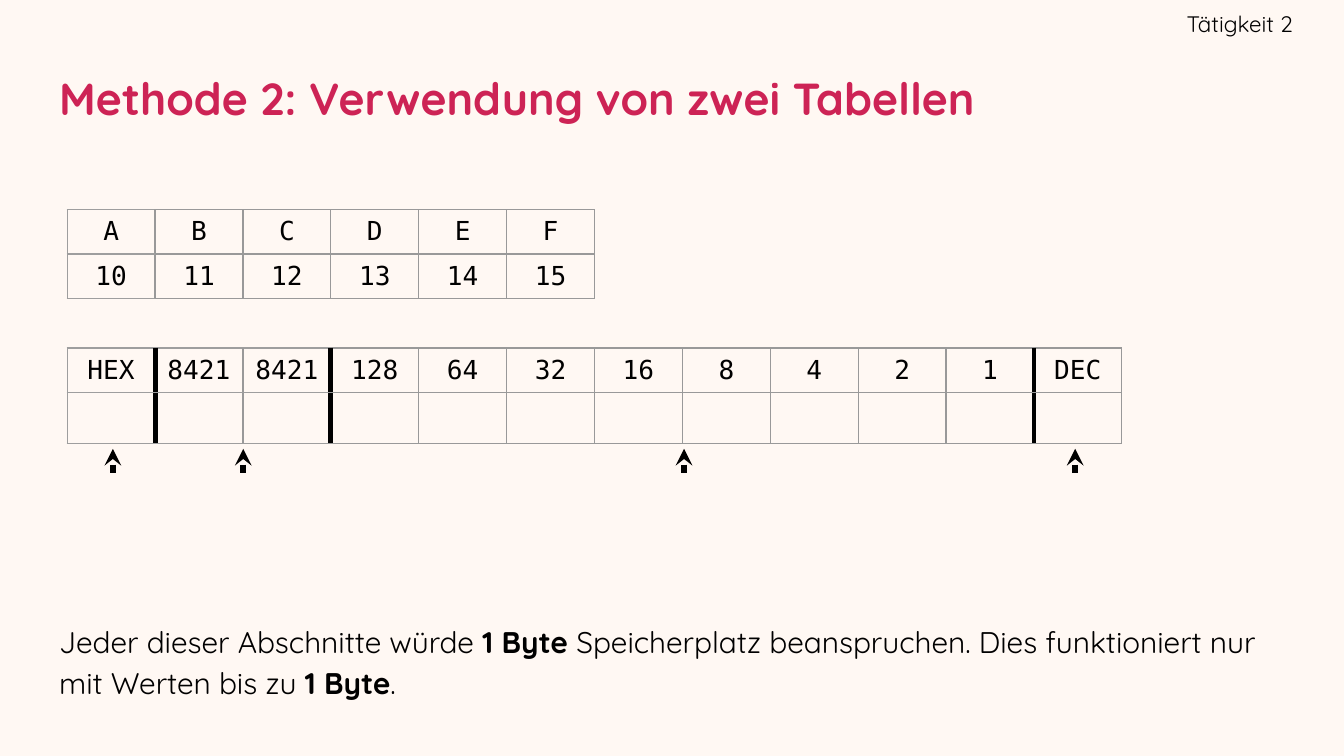
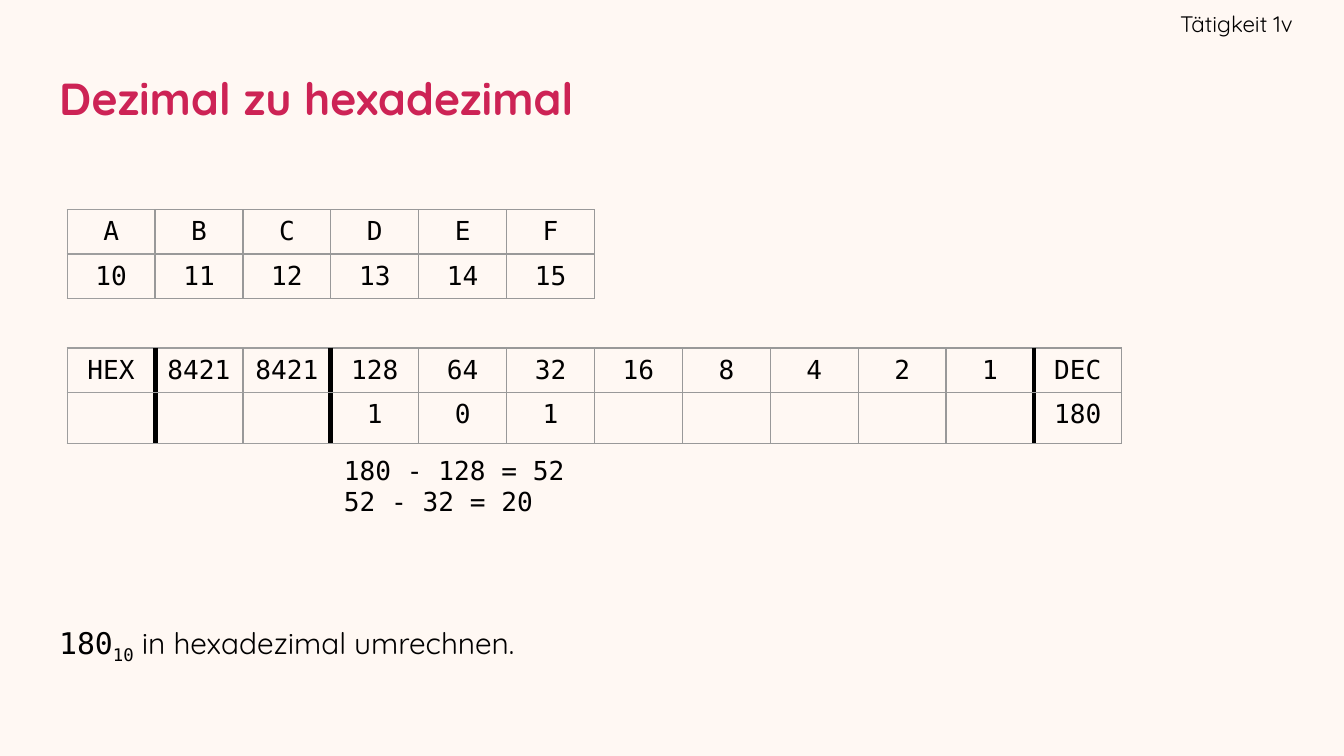
from lxml import etree
from pptx import Presentation
from pptx import util as u
from pptx.dml.color import RGBColor
from pptx.enum import shapes, text
from pptx.oxml import ns

CREAM = RGBColor(0xFF, 0xF8, 0xF3)
PINK = RGBColor(0xCD, 0x23, 0x55)
BLACK = RGBColor(0, 0, 0)
GREY = RGBColor(0x99, 0x99, 0x99)
LIGHT_GREY = RGBColor(0x9E, 0x9E, 0x9E)
SANS, MONO = "Quicksand", "DejaVu Sans Mono"

COLUMN_WIDTH = u.Inches(7.85 / 12)
LETTER_ROWS = [list("ABCDEF"), [str(n) for n in range(10, 16)]]
BIT_HEADER = ["HEX", "8421", "8421"] + [str(2 ** n) for n in range(7, -1, -1)] + ["DEC"]
SEPARATORS = (0, 2, 10)  # columns followed by a thick line

# Each run: text, font, bold, baseline in thousandths of a percent
PAGES = [
    {
        "title": "Methode 2: Verwendung von zwei Tabellen",
        "activity": "Tätigkeit 2",
        "values": [""] * 12,
        "explanation": [
            ("Jeder dieser Abschnitte würde ", SANS, False, 0),
            ("1 Byte ", SANS, True, 0),
            ("Speicherplatz beanspruchen. Dies funktioniert nur mit Werten bis zu ", SANS, False, 0),
            ("1 Byte", SANS, True, 0),
            (".", SANS, False, 0),
        ],
        "space_after": 0,
        "arrows": [0.84, 1.81, 5.09, 8],
        "working": [],
    },
    {
        "title": "Dezimal zu hexadezimal",
        "activity": "Tätigkeit 1v",
        "values": ["", "", "", "1", "0", "1", "", "", "", "", "", "180"],
        "explanation": [
            ("180", MONO, False, 0),
            ("10", MONO, False, -25000),
            (" in hexadezimal umrechnen.", SANS, False, 0),
        ],
        "space_after": 16,
        "arrows": [],
        "working": ["180 - 128 = 52", "52 - 32 = 20"],
    },
]


def style_frame(frame, size, font, color=BLACK, bold=False, align=text.PP_ALIGN.LEFT):
    for paragraph in frame.paragraphs:
        paragraph.alignment = align
        for run in paragraph.runs:
            run.font.size = u.Pt(size)
            run.font.name = font
            run.font.bold = bold
            run.font.color.rgb = color


def add_grid(slide, top, rows, heights, light_columns, separators=()):
    columns = len(rows[0])
    grid = slide.shapes.add_table(
        len(rows), columns, u.Inches(0.5), u.Inches(top),
        COLUMN_WIDTH * columns, u.Inches(sum(heights))).table
    grid.first_row = grid.horz_banding = False
    for column in grid.columns:
        column.width = COLUMN_WIDTH
    for r, values in enumerate(rows):
        grid.rows[r].height = u.Inches(heights[r])
        for c, value in enumerate(values):
            cell = grid.cell(r, c)
            cell.margin_left = cell.margin_right = u.Inches(0.05)
            cell.margin_top = cell.margin_bottom = u.Inches(0.05)
            if value:
                cell.text_frame.text = value
            else:
                etree.SubElement(cell.text_frame.paragraphs[0]._p,
                                 ns.qn("a:endParaRPr"), sz="1400")
            style_frame(cell.text_frame, 14, MONO, align=text.PP_ALIGN.CENTER)
            # Cell borders
            thick_sides = {"L": c - 1 in separators, "R": c in separators}
            light_sides = "TB" if c < light_columns else ""
            if c == 0:
                light_sides += "L"
            properties = cell._tc.get_or_add_tcPr()
            for side in "LRTB":
                thick = thick_sides.get(side, False)
                color = BLACK if thick else LIGHT_GREY if side in light_sides else GREY
                line = etree.SubElement(properties, ns.qn(f"a:ln{side}"),
                                        w=str(u.Pt(3 if thick else 0.75)))
                fill = etree.SubElement(line, ns.qn("a:solidFill"))
                etree.SubElement(fill, ns.qn("a:srgbClr"), val=str(color))
            cell.fill.background()


# 16:9 slides with a shared background
prs = Presentation()
prs.slide_width, prs.slide_height = u.Inches(10), u.Inches(10 * 9 / 16)
prs.slide_master.background.fill.solid()
prs.slide_master.background.fill.fore_color.rgb = CREAM
two_content = prs.slide_layouts[3]

for page in PAGES:
    slide = prs.slides.add_slide(two_content)
    title, explanation, activity = slide.placeholders

    # Placeholder positions and frames
    for holder, box, right_margin, anchor in (
        (title, (0.34, 0.34, 9.32, 0.77), 0.1, text.MSO_ANCHOR.MIDDLE),
        (explanation, (0.34, 4.5, 9.32, 0.76), 0.1, text.MSO_ANCHOR.TOP),
        (activity, (7.48, 0, 2.14, 0.35), 0, text.MSO_ANCHOR.MIDDLE),
    ):
        holder.left, holder.top, holder.width, holder.height = map(u.Inches, box)
        frame = holder.text_frame
        frame.margin_left = frame.margin_top = frame.margin_bottom = u.Inches(0.1)
        frame.margin_right = u.Inches(right_margin)
        frame.vertical_anchor = anchor
        frame.auto_size = text.MSO_AUTO_SIZE.NONE
        frame.word_wrap = True

    # Title and activity label
    title.text_frame.text = page["title"]
    style_frame(title.text_frame, 24, SANS, PINK, bold=True)
    activity.text_frame.text = page["activity"]
    style_frame(activity.text_frame, 12, SANS, align=text.PP_ALIGN.RIGHT)

    # Explanation with mixed runs
    sentence = explanation.text_frame.paragraphs[0]
    sentence.line_spacing = 1.15
    sentence.space_after = u.Pt(page["space_after"])
    for words, *_ in page["explanation"]:
        sentence.add_run().text = words
    style_frame(explanation.text_frame, 16, SANS)
    for run, (_, font, bold, baseline) in zip(sentence.runs, page["explanation"]):
        run.font.name, run.font.bold = font, bold
        if baseline:
            run.font._element.set("baseline", str(baseline))

    # No bullets in the body placeholders
    for holder in (explanation, activity):
        paragraph = holder.text_frame.paragraphs[0]
        paragraph.space_before = u.Pt(0)
        properties = paragraph._p.get_or_add_pPr()
        properties.set("marL", "0")
        properties.set("indent", "0")
        etree.SubElement(properties, ns.qn("a:buNone"))

    # Letter values and bit values
    add_grid(slide, 1.56, LETTER_ROWS, [0.33, 0.33], 1)
    add_grid(slide, 2.59, [BIT_HEADER, page["values"]], [0.33, 0.38], 3, SEPARATORS)

    # Arrows pointing up at the bit table
    for x in page["arrows"]:
        arrow = slide.shapes.add_connector(
            shapes.MSO_CONNECTOR.STRAIGHT,
            u.Inches(x), u.Inches(3.34), u.Inches(x), u.Inches(3.52))
        arrow.line.color.rgb = BLACK
        arrow.line.width = u.Pt(3)
        etree.SubElement(arrow.line._get_or_add_ln(), ns.qn("a:headEnd"), type="stealth")
        etree.SubElement(arrow._element.spPr, ns.qn("a:effectLst"))

    # Subtractions below the bit table
    if page["working"]:
        working = slide.shapes.add_textbox(
            u.Inches(2.51), u.Inches(3.33), u.Inches(2.14), u.Inches(0.91)).text_frame
        working.word_wrap = True
        working.margin_left = working.margin_right = u.Inches(0.05)
        working.margin_top = working.margin_bottom = u.Inches(0.05)
        working.text = "\n".join(page["working"])
        style_frame(working, 14, MONO)

prs.save("out.pptx")
